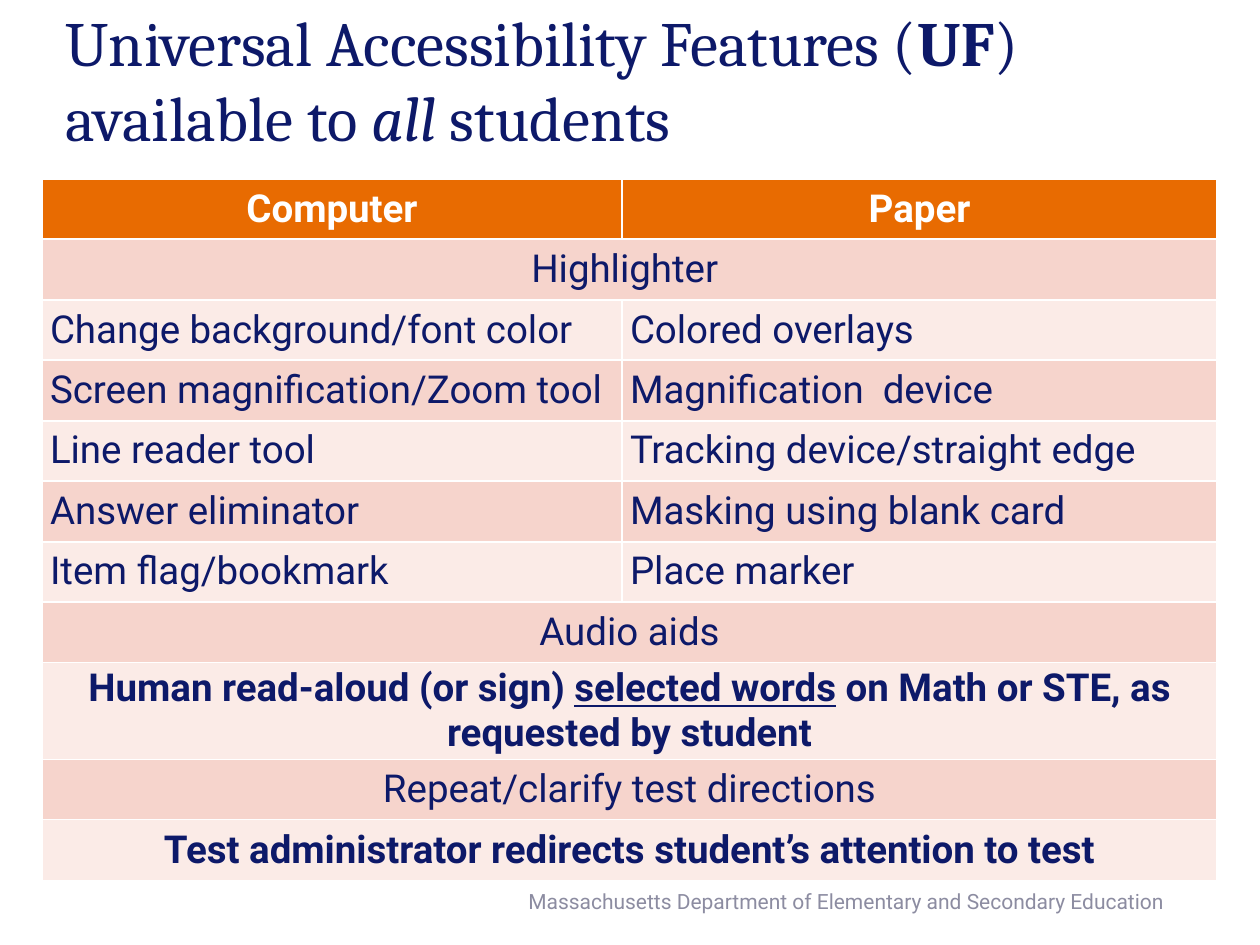
"""Build a slide with a table of accessibility features for all students."""
from pptx import Presentation
from pptx import util as u
from pptx.dml import color
from pptx.enum import text

PX = 914400 / 126
NAVY, ORANGE, WHITE, GRAY = "0D1969", "E86B01", "FFFFFF", "8C8CA1"
BANDS = ["FBEBE7", "F6D4CC"]


def px(*lengths):
    return [u.Emu(round(length * PX)) for length in lengths]


def rgb(value):
    return color.RGBColor.from_string(value)


presentation = Presentation()
presentation.slide_width, presentation.slide_height = px(1260, 945)
slide = presentation.slides.add_slide(presentation.slide_layouts[5])

title = slide.shapes.title
title.left, title.top, title.width, title.height = px(53, 0, 1166, 158)
title.text_frame.vertical_anchor = text.MSO_ANCHOR.MIDDLE
paragraph = title.text_frame.paragraphs[0]
paragraph.alignment = text.PP_ALIGN.LEFT
for words, bold, italic in [
    ("Universal Accessibility Features (", False, False),
    ("UF", True, False),
    (")", False, False),
    ("\v", False, False),
    ("available to ", False, False),
    ("all", False, True),
    (" students", False, False),
]:
    if words == "\v":
        paragraph.add_line_break()
        continue
    run = paragraph.add_run()
    run.text = words
    run.font.name, run.font.size = "Cambria", u.Pt(36)
    run.font.bold, run.font.italic = bold, italic
    run.font.color.rgb = rgb(NAVY)

footer = slide.shapes.add_textbox(*px(431, 876, 746, 50))
footer.text_frame.word_wrap = True
footer.text_frame.vertical_anchor = text.MSO_ANCHOR.MIDDLE
paragraph = footer.text_frame.paragraphs[0]
paragraph.text = "Massachusetts Department of Elementary and Secondary Education"
paragraph.alignment = text.PP_ALIGN.RIGHT
run = paragraph.runs[0]
run.font.name, run.font.size = "Roboto", u.Pt(12)
run.font.color.rgb = rgb(GRAY)

features = [
    ["Computer", "Paper"],
    ["Highlighter "],
    ["Change background/font color", "Colored overlays"],
    ["Screen magnification/Zoom tool", "Magnification  device"],
    ["Line reader tool", "Tracking device/straight edge"],
    ["Answer eliminator", "Masking using blank card"],
    ["Item flag/bookmark", "Place marker"],
    ["Audio aids"],
    ["Human read-aloud (or sign) |selected words| on Math or STE, as requested by student"],
    ["Repeat/clarify test directions"],
    ["Test administrator redirects student’s attention to test"],
]
bold_rows = [0, 8, 10]
column_widths = px(580, 595)
row_heights = px(*[60, 61] * 4, 97, 60, 61)

table = slide.shapes.add_table(
    len(features), 2, *px(42, 179), sum(column_widths), sum(row_heights)
).table
for column, width in zip(table.columns, column_widths):
    column.width = width
for row, height in zip(table.rows, row_heights):
    row.height = height

for row_index, entries in enumerate(features):
    header, merged = row_index == 0, len(entries) == 1
    if merged:
        table.cell(row_index, 0).merge(table.cell(row_index, 1))
    for cell in table.rows[row_index].cells:
        cell.fill.solid()
        cell.fill.fore_color.rgb = rgb(ORANGE if header else BANDS[row_index % 2])
        cell.vertical_anchor = text.MSO_ANCHOR.MIDDLE
        cell.margin_left, cell.margin_right, cell.margin_top, cell.margin_bottom = px(8, 8, 0, 0)
    for column_index, entry in enumerate(entries):
        paragraph = table.cell(row_index, column_index).text_frame.paragraphs[0]
        centered = header or merged
        paragraph.alignment = text.PP_ALIGN.CENTER if centered else text.PP_ALIGN.LEFT
        for part_index, words in enumerate(entry.split("|")):
            run = paragraph.add_run()
            run.text = words
            run.font.name, run.font.size = "Roboto", u.Pt(22)
            run.font.bold = row_index in bold_rows
            run.font.underline = part_index == 1
            run.font.color.rgb = rgb(WHITE if header else NAVY)

presentation.save("out.pptx")
